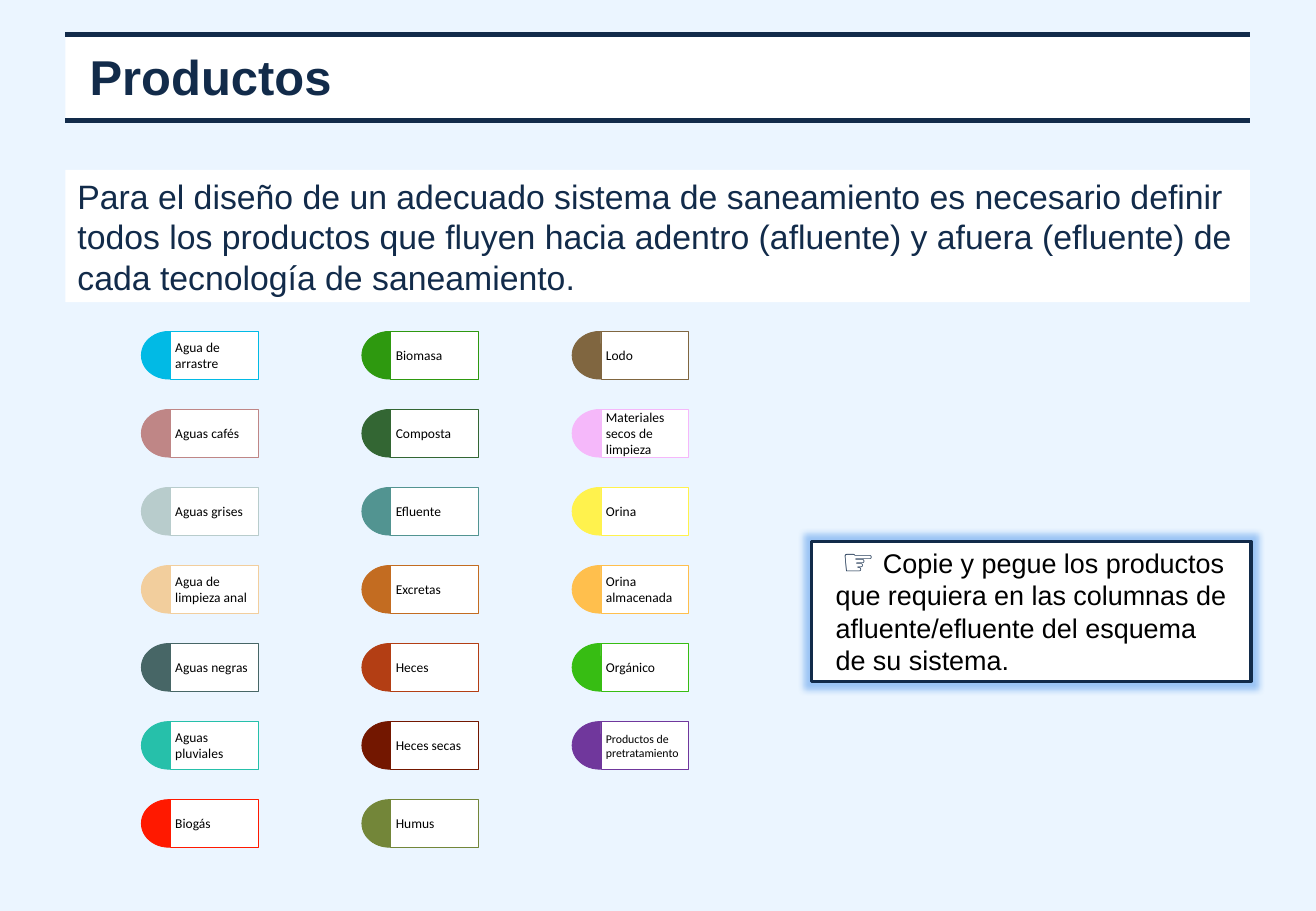
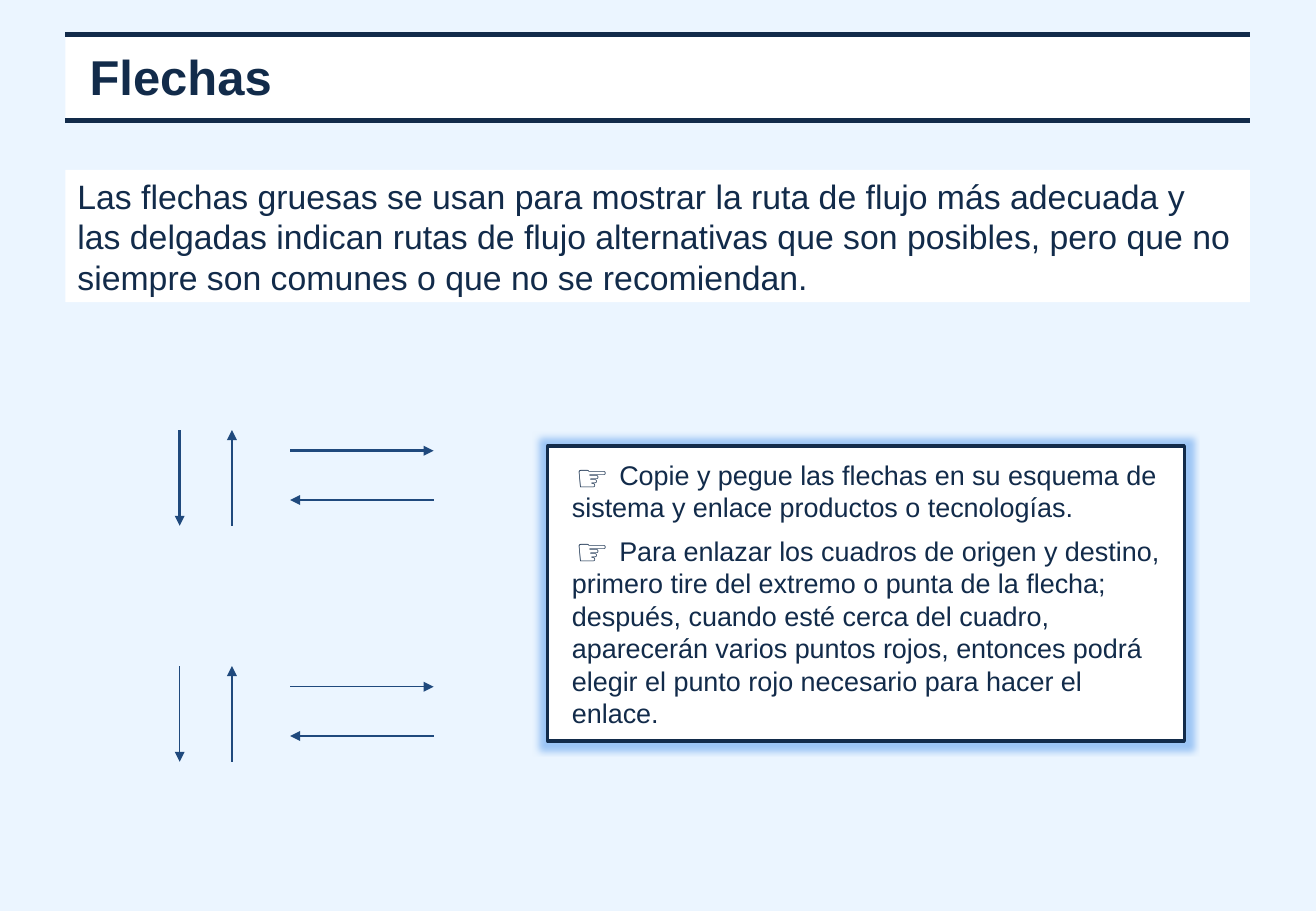
from dataclasses import dataclass

import lxml.etree
import pptx
import pptx.dml.color
import pptx.enum.shapes
import pptx.enum.text
import pptx.oxml.ns
import pptx.util

Pt = pptx.util.Pt
qn = pptx.oxml.ns.qn
SHAPE = pptx.enum.shapes.MSO_SHAPE
STRAIGHT = pptx.enum.shapes.MSO_CONNECTOR.STRAIGHT
MIDDLE = pptx.enum.text.MSO_ANCHOR.MIDDLE
TOP = pptx.enum.text.MSO_ANCHOR.TOP
LEFT = pptx.enum.text.PP_ALIGN.LEFT

# Shared style
NAVY, BLUE, WHITE, BLACK, PALE = "122B4A", "1F497D", "FFFFFF", "000000", "EBF5FF"
EDGE, WIDE = 38.8, 702


@dataclass
class Tag:
    name: str
    tint: str
    size: float = 8


@dataclass
class Arrow:
    x1: float
    y1: float
    x2: float
    y2: float


# Products, one list per column, keyed by left edge
TAGS = {
    83.8: [
        Tag("Agua de arrastre", "01BAE5"),
        Tag("Aguas cafés", "BF8686"),
        Tag("Aguas grises", "B8CCCC"),
        Tag("Agua de limpieza anal", "F2CE9D"),
        Tag("Aguas negras", "476666"),
        Tag("Aguas pluviales", "26C0AA"),
        Tag("Biogás", "FF1900"),
    ],
    214.5: [
        Tag("Biomasa", "2E990F"),
        Tag("Composta", "336633"),
        Tag("Efluente", "529491"),
        Tag("Excretas", "C36C21"),
        Tag("Heces", "B33E14"),
        Tag("Heces secas", "731700"),
        Tag("Humus", "738639"),
    ],
    339.1: [
        Tag("Lodo", "806640"),
        Tag("Materiales secos de limpieza", "F5B8FA"),
        Tag("Orina", "FFF24D"),
        Tag("Orina almacenada", "FFBF4D"),
        Tag("Orgánico", "37BD13"),
        Tag("Productos de pretratamiento", "70379C", 7),
    ],
}

# Arrows of one set, relative to its top
ARROWS = [
    Arrow(172, 12.3, 257, 12.3),
    Arrow(257, 41.5, 172, 41.5),
    Arrow(137.5, 56.8, 137.5, 0),
    Arrow(106.5, 0, 106.5, 56.8),
]


def color(code: str) -> pptx.dml.color.RGBColor:
    return pptx.dml.color.RGBColor.from_string(code)


def write(shape, *texts: str, size: float, font: str = "Arial", tint: str = NAVY,
          bold: bool = False, inset: tuple = (7.2, 3.6, 7.2, 3.6), margin: float = 0,
          indent: float = 0, before: float = 0, gap: float = 0,
          anchor=MIDDLE, wrap: bool = True) -> None:
    """Fill a shape with paragraphs; before is the space above the first, gap above the rest."""
    frame = shape.text_frame
    frame.word_wrap = wrap
    frame.vertical_anchor = anchor
    (frame.margin_left, frame.margin_top,
     frame.margin_right, frame.margin_bottom) = map(Pt, inset)
    for i, text in enumerate(texts):
        para = frame.add_paragraph() if i else frame.paragraphs[0]
        para.text = text
        para.alignment = LEFT
        para.space_before = Pt(gap if i else before)
        props = para._p.get_or_add_pPr()
        props.set("marL", str(Pt(margin)))
        props.set("indent", str(Pt(indent)))
        for run in para.runs:
            run.font.size, run.font.name, run.font.bold = Pt(size), font, bold
            run.font.color.rgb = color(tint)
        for stop in para._p.findall(qn("a:br")):
            lxml.etree.SubElement(stop, qn("a:rPr"), sz=str(int(size * 100)))


def block(shapes, kind, x: float, y: float, w: float, h: float,
          fill: str = WHITE, line: str = "", width: float = 0.5):
    shape = shapes.add_shape(kind, Pt(x), Pt(y), Pt(w), Pt(h))
    shape.shadow.inherit = False
    shape.fill.solid()
    shape.fill.fore_color.rgb = color(fill)
    if line:
        shape.line.color.rgb = color(line)
        shape.line.width = Pt(width)
    else:
        shape.line.fill.background()
    return shape


def stroke(slide, x1: float, y1: float, x2: float, y2: float,
           tint: str, width: float, head: bool = False) -> None:
    line = slide.shapes.add_connector(STRAIGHT, Pt(x1), Pt(y1), Pt(x2), Pt(y2))
    line.line.color.rgb = color(tint)
    line.line.width = Pt(width)
    props = line._element.spPr
    if head:
        lxml.etree.SubElement(props.find(qn("a:ln")), qn("a:tailEnd"), type="triangle")
    lxml.etree.SubElement(props, qn("a:effectLst"))


def start(deck, title: str, intro: str):
    """Add a slide with background, title band and introduction."""
    slide = deck.slides.add_slide(deck.slide_layouts[6])
    slide.background.fill.solid()
    slide.background.fill.fore_color.rgb = color(PALE)
    band = block(slide.shapes, SHAPE.RECTANGLE, EDGE, 21.3, WIDE, 50)
    write(band, title, size=29, bold=True, inset=(7.2, 0, 7.2, 2.9), margin=7.2)
    for y in (20.6, 71.5):
        stroke(slide, EDGE, y, EDGE + WIDE, y, NAVY, 3)
    body = block(slide.shapes, SHAPE.RECTANGLE, EDGE, 100.7, WIDE, 78.5)
    write(body, intro, size=20, before=4)
    return slide


def badge(slide, tag: Tag, x: float, y: float) -> None:
    """Draw a label with a coloured half-round end."""
    group = slide.shapes.add_group_shape().shapes
    label = block(group, SHAPE.RECTANGLE, x + 17.2, y, 52, 28.2, line=tag.tint)
    write(label, tag.name, size=tag.size, font="Calibri", tint=BLACK,
          inset=(2.9, 3.6, 2.9, 3.6))
    cap = block(group, SHAPE.CHORD, x, y, 32.4, 28.2, tag.tint, tag.tint)
    cap.adjustments[0], cap.adjustments[1] = 52.44, 163.87


def note(slide, x: float, y: float, w: float, h: float, *texts: str,
         tint: str = NAVY) -> None:
    """Draw a framed, glowing hint box."""
    box = block(slide.shapes, SHAPE.FLOWCHART_PROCESS, x, y, w, h, line=NAVY, width=2)
    effects = box._element.spPr.find(qn("a:effectLst"))
    glow = lxml.etree.SubElement(effects, qn("a:glow"), rad=str(Pt(8)))
    hue = lxml.etree.SubElement(glow, qn("a:srgbClr"), val="4F81BD")
    lxml.etree.SubElement(hue, qn("a:satMod"), val="175000")
    lxml.etree.SubElement(hue, qn("a:alpha"), val="40000")
    write(box, *texts, size=16, tint=tint, margin=7.2, indent=28.1, gap=7)


def hand(slide, x: float, y: float) -> None:
    box = slide.shapes.add_textbox(Pt(x), Pt(y), Pt(35.3), Pt(33.8))
    write(box, "☞", size=22, bold=True, anchor=TOP, wrap=False)


def goods(deck) -> None:
    slide = start(
        deck, "Productos",
        "Para el diseño de un adecuado sistema de saneamiento es necesario definir "
        "todos los productos que fluyen hacia adentro (afluente) y afuera (efluente) "
        "de cada tecnología de saneamiento.")
    for x, tags in TAGS.items():
        for row, tag in enumerate(tags):
            badge(slide, tag, x, 196.5 + 46.25 * row)
    note(slide, 481, 321, 260.4, 82.8,
         "Copie y pegue los productos que requiera en las columnas de "
         "afluente/efluente del esquema \vde su sistema.", tint=BLACK)
    hand(slide, 491.8, 315.4)


def flows(deck) -> None:
    slide = start(
        deck, "Flechas",
        "Las flechas gruesas se usan para mostrar la ruta de flujo más adecuada y "
        "las delgadas indican rutas de flujo alternativas que son posibles, pero que "
        "no siempre son comunes o que no se recomiendan.")
    for top, width in ((254.9, 1.5), (394.8, 0.75)):
        for a in ARROWS:
            stroke(slide, a.x1, top + a.y1, a.x2, top + a.y2, BLUE, width, head=True)
    note(slide, 324.7, 264.3, 377.3, 175,
         "Copie y pegue las flechas en su esquema de sistema y enlace productos o "
         "tecnologías.",
         "Para enlazar los cuadros de origen y destino, primero tire del extremo o "
         "punta de la flecha; después, cuando esté cerca del cuadro, aparecerán varios "
         "puntos rojos, entonces podrá elegir el punto rojo necesario para hacer el "
         "enlace.")
    for y in (265.7, 309.6):
        hand(slide, 334.1, y)


def main() -> None:
    deck = pptx.Presentation()
    deck.slide_width, deck.slide_height = Pt(780), Pt(540)
    goods(deck)
    flows(deck)
    deck.save("out.pptx")


if __name__ == "__main__":
    main()
